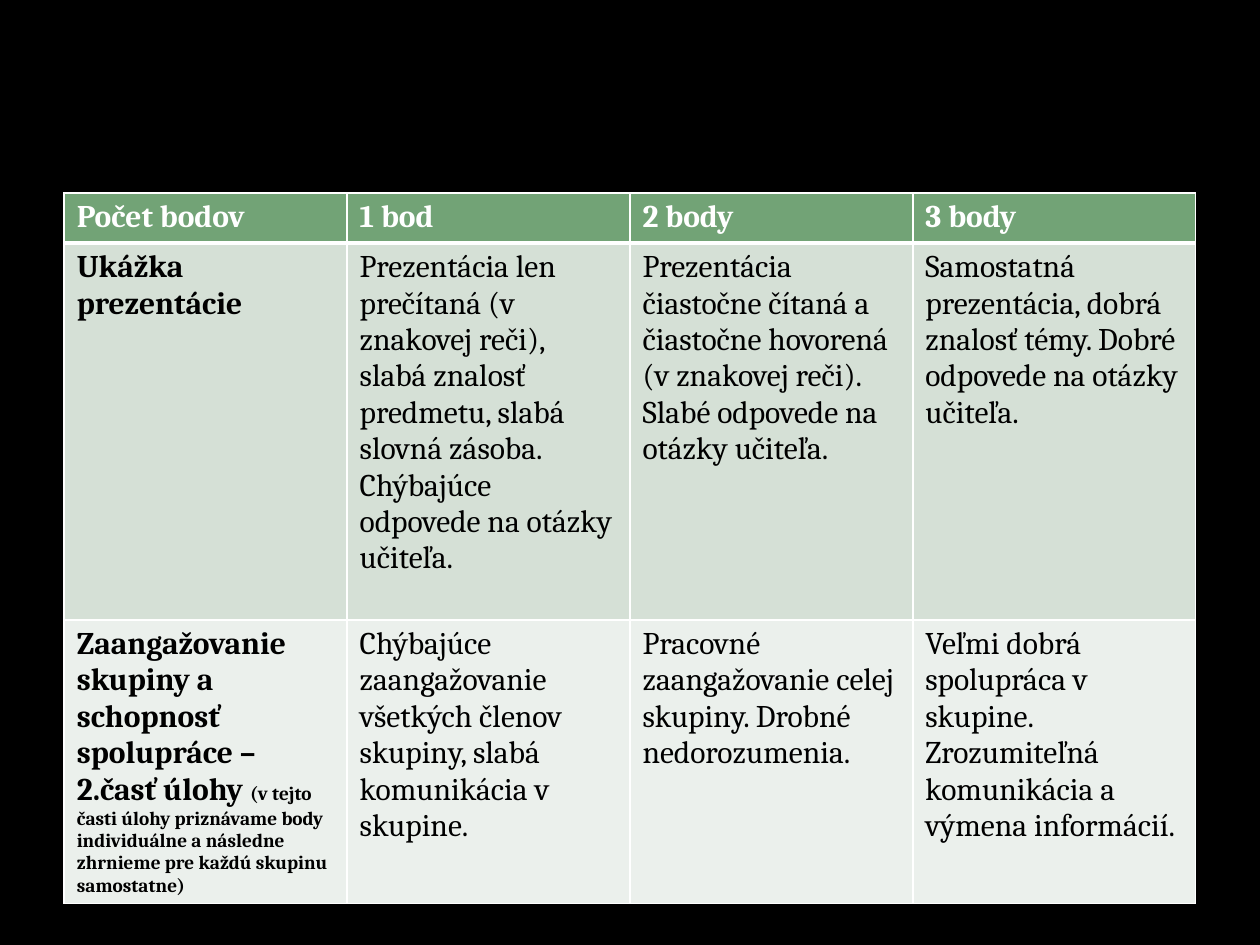
"""Build a slide with a scoring table for group presentations."""
from lxml import etree
from pptx import Presentation
from pptx import util as u
from pptx.dml.color import RGBColor
from pptx.oxml.ns import qn

FONT = "Cambria"
BLACK, WHITE = "000000", "FFFFFF"
LEFT, TOP, WIDTH = 0.51, 1.53, 8.98
HEADER = ["Počet bodov", "1 bod", "2 body", "3 body"]
PRESENTATION = [
    "Ukážka prezentácie",
    "Prezentácia len prečítaná (v znakovej reči), slabá znalosť predmetu, "
    "slabá slovná zásoba. Chýbajúce odpovede na otázky učiteľa.",
    "Prezentácia čiastočne čítaná a čiastočne hovorená (v znakovej reči). "
    "Slabé odpovede na otázky učiteľa.",
    "Samostatná prezentácia, dobrá znalosť témy. Dobré odpovede na otázky učiteľa.",
]
TEAMWORK = [
    "Zaangažovanie skupiny a schopnosť spolupráce – 2.časť úlohy ",
    "Chýbajúce zaangažovanie všetkých členov skupiny, slabá komunikácia v skupine.",
    "Pracovné zaangažovanie celej skupiny. Drobné nedorozumenia.",
    "Veľmi dobrá spolupráca v skupine. Zrozumiteľná komunikácia a výmena informácií.",
]
TEAMWORK_NOTE = ("(v tejto časti úlohy priznávame body individuálne a následne "
                 "zhrnieme pre každú skupinu samostatne)")
ROWS = [
    {"texts": HEADER, "height": 0.4, "fill": "72A376", "color": WHITE},
    {"texts": PRESENTATION, "height": 2.99, "fill": "D5E0D6", "color": BLACK},
    {"texts": TEAMWORK, "height": 2.25, "fill": "EBF0EC", "color": BLACK},
]


def rgb(value):
    return RGBColor.from_string(value)


def add_span(para, words, size, color, bold):
    span = para.add_run()
    span.text = words
    span.font.name = FONT
    span.font.size = u.Pt(size)
    span.font.bold = bold
    span.font.color.rgb = rgb(color)


def set_borders(cell, widths):
    props = cell._tc.get_or_add_tcPr()
    for index, (side, width) in enumerate(widths.items()):
        line = etree.Element(qn(f"a:ln{side}"), w=str(u.Pt(width)))
        fill = etree.SubElement(line, qn("a:solidFill"))
        etree.SubElement(fill, qn("a:srgbClr"), val=WHITE)
        props.insert(index, line)


def add_score_table(page):
    height = sum(row["height"] for row in ROWS)
    frame = page.shapes.add_table(len(ROWS), len(HEADER), u.Inches(LEFT), u.Inches(TOP),
                                  u.Inches(WIDTH), u.Inches(height))
    table = frame.table
    for column in table.columns:
        column.width = u.Inches(WIDTH / len(HEADER))
    for r, row in enumerate(ROWS):
        table.rows[r].height = u.Inches(row["height"])
        for c, words in enumerate(row["texts"]):
            cell = table.cell(r, c)
            cell.fill.solid()
            cell.fill.fore_color.rgb = rgb(row["fill"])
            set_borders(cell, {"L": 1, "R": 1, "T": 3 if r == 1 else 1, "B": 3 if r == 0 else 1})
            para = cell.text_frame.paragraphs[0]
            add_span(para, words, 18, row["color"], r == 0 or c == 0)
    add_span(table.cell(2, 0).text_frame.paragraphs[0], TEAMWORK_NOTE, 11, BLACK, True)


def main():
    deck = Presentation()
    deck.slide_width, deck.slide_height = u.Inches(10), u.Inches(7.5)
    page = deck.slides.add_slide(deck.slide_layouts[6])
    page.background.fill.solid()
    page.background.fill.fore_color.rgb = rgb(BLACK)
    add_score_table(page)
    deck.save("out.pptx")


if __name__ == "__main__":
    main()
